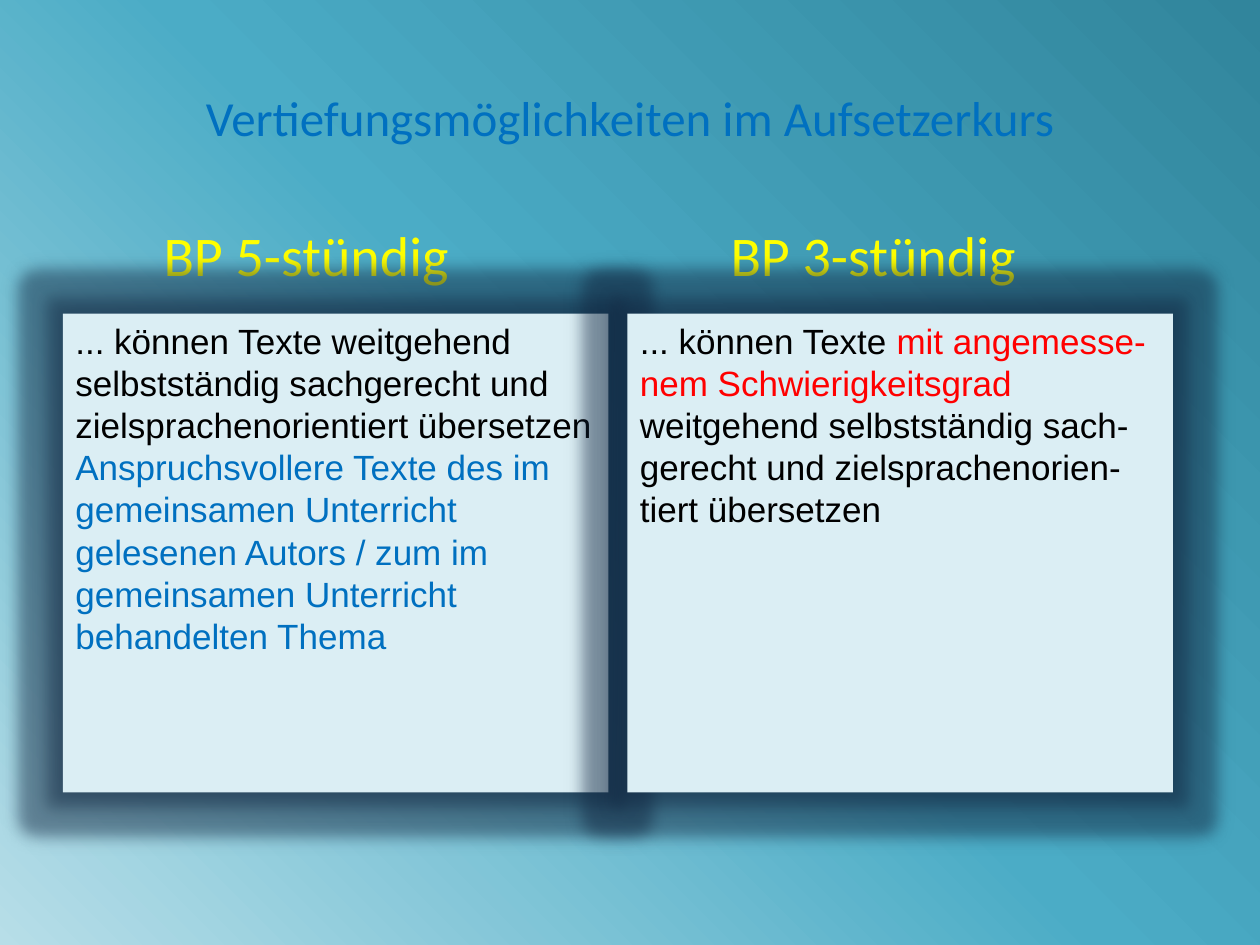
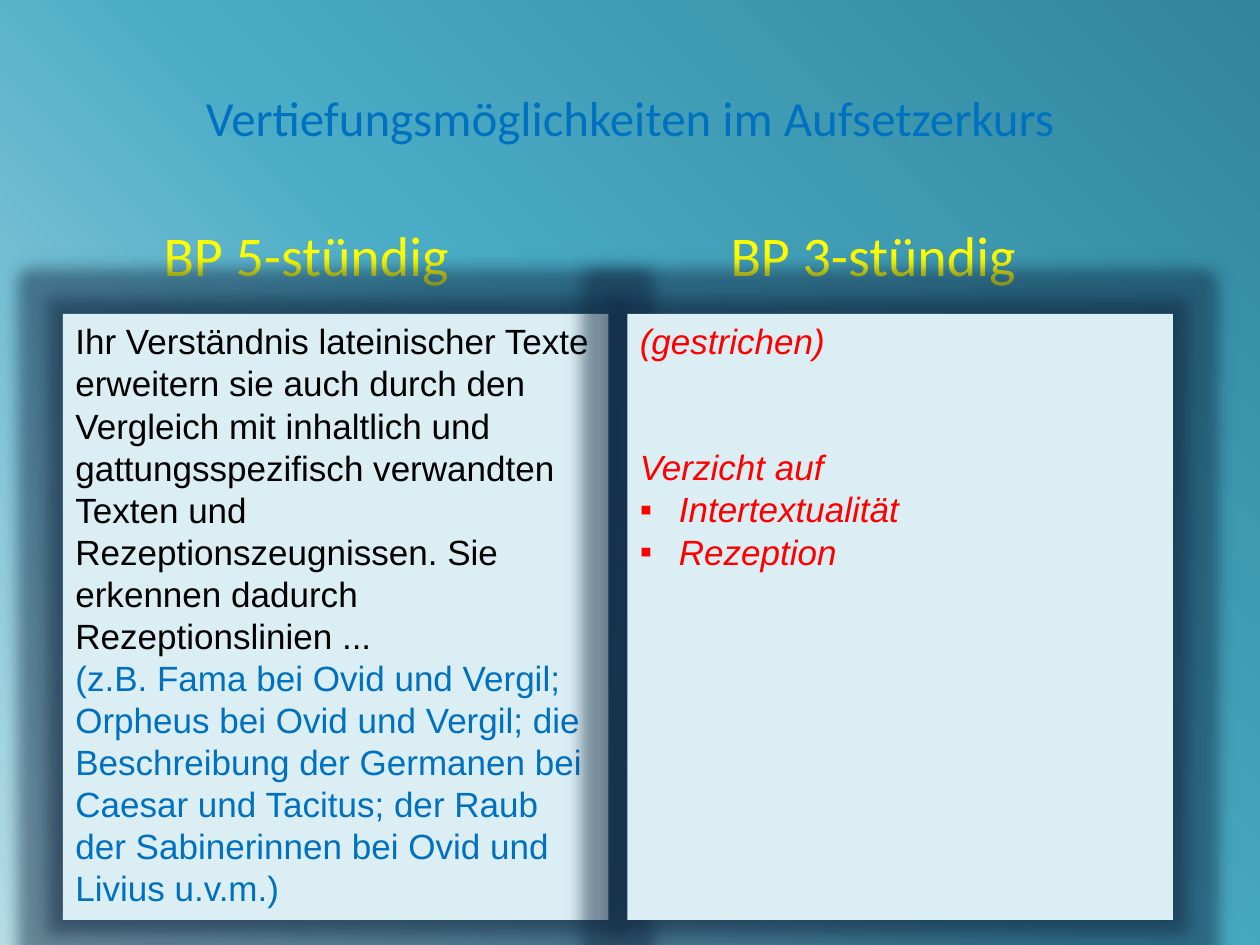
from copy import deepcopy

from lxml import etree
from pptx import Presentation
from pptx.dml.color import RGBColor
from pptx.enum.shapes import MSO_SHAPE as SHAPE
from pptx.enum.text import MSO_ANCHOR as ANCHOR, PP_ALIGN as ALIGN
from pptx.oxml import parse_xml
from pptx.oxml.ns import nsdecls, qn
from pptx.util import Inches, Pt

BLACK, BLUE, RED, YELLOW = "000000", "0070C0", "FF0000", "FFFF00"
PANEL, SHADE = "DBEEF4", "10253F"
GRADIENT = [(0, "31859C"), (0.5, "4BACC6"), (1, "B7DEE8")]
TITLE = "Vertiefungsmöglichkeiten im Aufsetzerkurs"
HEADINGS = ["BP 5-stündig", "BP 3-stündig"]
EFFECTS = [
    f'<a:glow {nsdecls("a")} rad="{Inches(0.24)}"><a:srgbClr val="{SHADE}">'
    '<a:alpha val="40000"/></a:srgbClr></a:glow>',
    f'<a:outerShdw {nsdecls("a")} blurRad="{Inches(0.12)}" dist="0" algn="ctr" '
    f'rotWithShape="0"><a:srgbClr val="{SHADE}"><a:alpha val="40000"/>'
    '</a:srgbClr></a:outerShdw>',
]

# Each slide: panel height, then per panel its paragraphs as lists of (text, colour)
SLIDES = [
    (3.8, [
        [[("... können Texte weitgehend selbstständig sachgerecht und "
           "zielsprachenorientiert übersetzen", BLACK)],
         [("Anspruchsvollere Texte des im gemeinsamen Unterricht gelesenen Autors / "
           "zum im gemeinsamen Unterricht behandelten Thema", BLUE)]],
        [[("... können Texte ", BLACK),
          ("mit angemesse-nem Schwierigkeitsgrad ", RED),
          ("weitgehend selbstständig sach-gerecht und zielsprachenorien-tiert "
           "übersetzen", BLACK)]],
    ]),
    (4.81, [
        [[("Ihr Verständnis lateinischer Texte erweitern sie auch durch den Vergleich "
           "mit inhaltlich und gattungsspezifisch verwandten Texten und "
           "Rezeptionszeugnissen. Sie erkennen dadurch Rezeptionslinien ...", BLACK)],
         [("(z.B. Fama bei Ovid und Vergil; Orpheus bei Ovid und Vergil; die "
           "Beschreibung der Germanen bei Caesar und Tacitus; der Raub der "
           "Sabinerinnen bei Ovid und Livius u.v.m.)", BLUE)]],
        [[("(gestrichen)", RED)], [("Verzicht auf", RED)],
         [("Intertextualität", RED)], [("Rezeption", RED)]],
    ]),
]


def rgb(color):
    return RGBColor.from_string(color)


def add_text(p, text, size, font, color):
    r = p.add_run()
    r.text = text
    r.font.size, r.font.name = Pt(size), font
    r.font.color.rgb = rgb(color)


prs = Presentation()
prs.slide_width, prs.slide_height = Inches(10), Inches(7.5)

for height, panels in SLIDES:
    s = prs.slides.add_slide(prs.slide_layouts[6])

    # Background gradient from the top right to the bottom left
    fill = s.background.fill
    fill.gradient()
    fill.gradient_angle = 225
    stops = s.element.find(".//" + qn("a:gsLst"))
    stops.insert(1, deepcopy(stops[0]))
    for stop, (position, color) in zip(fill.gradient_stops, GRADIENT):
        stop.position = position
        stop.color.rgb = rgb(color)

    # Title
    tf = s.shapes.add_textbox(Inches(0.5), Inches(0.3), Inches(9), Inches(1.25)).text_frame
    tf.word_wrap = True
    tf.vertical_anchor = ANCHOR.MIDDLE
    tf.paragraphs[0].alignment = ALIGN.CENTER
    add_text(tf.paragraphs[0], TITLE, 28, "Calibri", BLUE)

    # Column headings, under the glow of the panels
    for i, heading in enumerate(HEADINGS):
        tf = s.shapes.add_textbox(Inches(1.2 + 4.5 * i), Inches(1.7),
                                  Inches(3), Inches(0.65)).text_frame
        tf.word_wrap = True
        add_text(tf.paragraphs[0], heading, 32, "Calibri", YELLOW)

    # Panels
    for i, paragraphs in enumerate(panels):
        sp = s.shapes.add_shape(SHAPE.RECTANGLE, Inches(0.5 + 4.48 * i), Inches(2.49),
                                Inches(4.33), Inches(height))
        sp.fill.solid()
        sp.fill.fore_color.rgb = rgb(PANEL)
        sp.line.fill.background()
        sp.shadow.inherit = False
        effects = sp.element.spPr.find(qn("a:effectLst"))
        for xml in EFFECTS:
            effects.append(parse_xml(xml))

        tf = sp.text_frame
        tf.word_wrap = True
        tf.vertical_anchor = ANCHOR.TOP
        for n, parts in enumerate(paragraphs):
            p = tf.add_paragraph() if n else tf.paragraphs[0]
            p.alignment = ALIGN.LEFT
            for text, color in parts:
                add_text(p, text, 20, "Arial", color)

# Dropped topics on the last slide: italic, with a gap and a bulleted list
for n, p in enumerate(tf.paragraphs):
    p.runs[0].font.italic = True
    if n == 1:
        p.space_before = Pt(48)
    if n >= 2:
        pPr = p._p.get_or_add_pPr()
        pPr.set("marL", str(Inches(0.31)))
        pPr.set("indent", str(-Inches(0.31)))
        etree.SubElement(pPr, qn("a:buFont"), typeface="Arial")
        etree.SubElement(pPr, qn("a:buChar"), char="▪")

prs.save("out.pptx")
